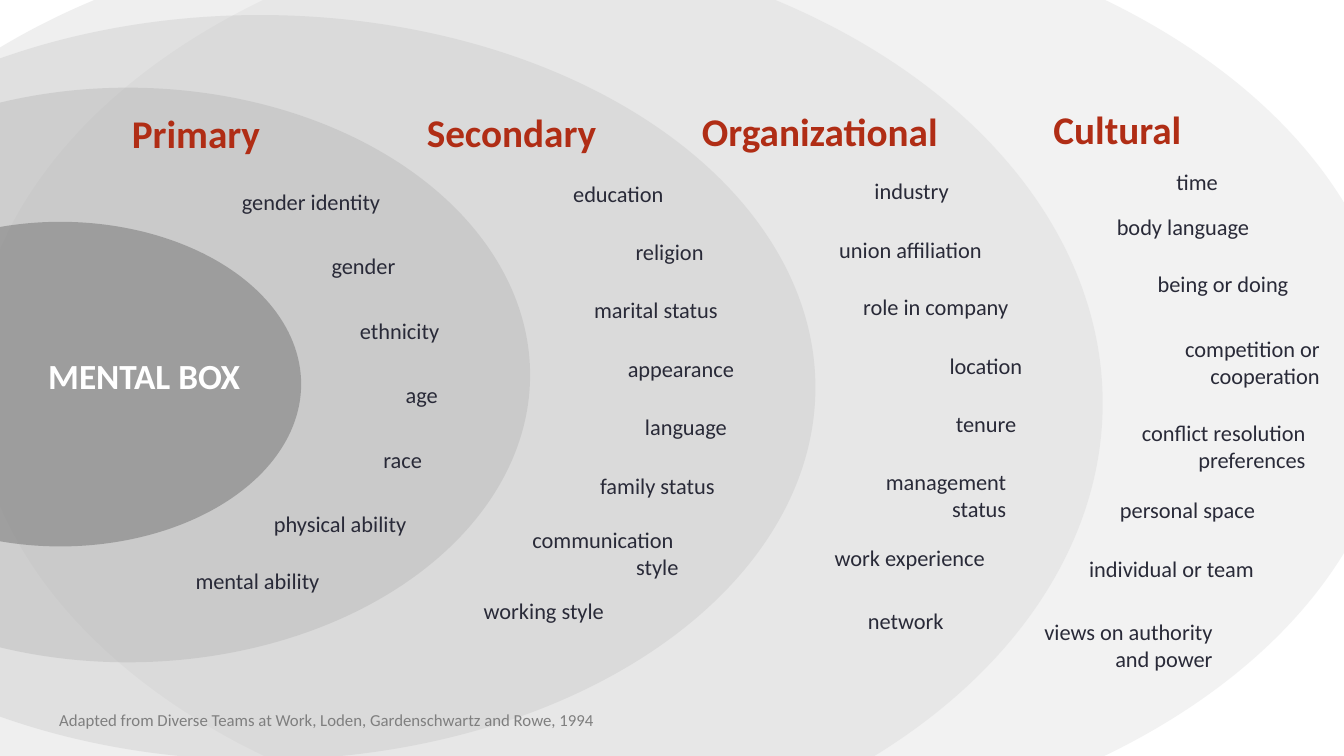
import pptx
import pptx.util
import pptx.dml.color
import pptx.enum.shapes
import pptx.enum.text
import pptx.oxml.ns
import lxml.etree

Cm = pptx.util.Cm
Align = pptx.enum.text.PP_ALIGN
Anchor = pptx.enum.text.MSO_ANCHOR

SLIDE_SIZE = (33.87, 19.05)
FACTOR_WIDTH = 7.24
LINE_HEIGHT = 0.68
HEADING_COLOR, FACTOR_COLOR = "B02D15", "292A38"

# left, top, width, height, fill, opacity in percent
LAYERS = [
    (-0.69, -2.29, 35.86, 23.62, "F2F2F2", 100),
    (-5.87, -1.65, 33.66, 23.62, "D8D8D8", 39),
    (-7.44, 0.38, 27.99, 18.77, "BFBFBF", 31),
    (-6.91, 2.21, 20.27, 14.48, "A5A5A5", 29),
    (-4.55, 5.59, 12.14, 8.18, "7F7F7F", 59),
]

# heading, heading box, line spacing, alignment, factors (text, left, top, lines, width)
DIMENSIONS = [
    ("Primary", (2.08, 2.79, 5.72, 1.27), 0.9, Align.CENTER, [
        ("gender identity", 4.22, 4.6),
        ("gender", 5.54, 6.22),
        ("ethnicity", 6.45, 7.85),
        ("age", 7.01, 9.47),
        ("race", 6.53, 11.1),
        ("physical ability", 4.95, 12.73),
        ("mental ability", 2.87, 14.15),
    ]),
    ("Secondary", (9.73, 2.82, 6.32, 1.24), 0.8, Align.RIGHT, [
        ("education", 9.73, 4.42),
        ("religion", 10.74, 5.87),
        ("marital status", 11.1, 7.34),
        ("appearance", 11.51, 8.81),
        ("language", 11.33, 10.29),
        ("family status", 11.02, 11.76),
        ("communication \nstyle", 10.11, 13.13, 2),
        ("working style", 8.23, 14.91),
    ]),
    ("Organizational", (17.04, 2.82, 7.24, 1.19), 0.8, Align.RIGHT, [
        ("industry", 16.92, 4.34),
        ("union affiliation", 17.75, 5.82),
        ("role in company", 18.42, 7.26),
        ("location", 18.77, 8.74),
        ("tenure", 18.62, 10.21),
        ("management status", 21.11, 11.66, 2, 4.5),
        ("work experience", 17.83, 13.59),
        ("network", 16.79, 15.16),
    ]),
    ("Cultural", (24.54, 2.67, 7.24, 1.32), 0.9, Align.RIGHT, [
        ("time", 23.7, 4.11),
        ("body language", 24.49, 5.23),
        ("being or doing", 25.48, 6.68),
        ("competition or cooperation", 27.79, 8.31, 2, 5.72),
        ("conflict resolution preferences", 25.91, 10.44, 2),
        ("personal space", 24.64, 12.37),
        ("individual or team", 24.61, 13.87),
        ("views on authority and power", 25.55, 15.44, 2, 5.26),
    ]),
]

CORE = ("MENTAL BOX", (0.69, 8.92, 5.89, 2.31))
SOURCE = ("Adapted from Diverse Teams at Work, Loden, Gardenschwartz and Rowe, 1994",
          (1.24, 17.75, 15.95, 0.76))


def paint(color_holder, hex_color):
    """Set a solid fill or a font to a hex colour."""
    if hasattr(color_holder, "solid"):
        color_holder.solid()
        color_holder.fore_color.rgb = pptx.dml.color.RGBColor.from_string(hex_color)
    else:
        color_holder.color.rgb = pptx.dml.color.RGBColor.from_string(hex_color)


def add_layer(slide, left, top, width, height, color, opacity):
    """Draw one ellipse of the nested layers."""
    layer = slide.shapes.add_shape(pptx.enum.shapes.MSO_SHAPE.OVAL,
                                   Cm(left), Cm(top), Cm(width), Cm(height))
    layer.shadow.inherit = False
    layer.line.fill.background()
    paint(layer.fill, color)
    if opacity < 100:
        tint = layer.fill._xPr.find(".//" + pptx.oxml.ns.qn("a:srgbClr"))
        alpha = lxml.etree.SubElement(tint, pptx.oxml.ns.qn("a:alpha"))
        alpha.set("val", str(opacity * 1000))


def add_label(slide, text, box, size, color, align, bold=False, spacing=None,
              anchor=Anchor.TOP, insets=(0.25, 0.13)):
    """Write a wrapped text box in one style."""
    frame = slide.shapes.add_textbox(*map(Cm, box)).text_frame
    frame.word_wrap = True
    frame.vertical_anchor = anchor
    frame.margin_left = frame.margin_right = Cm(insets[0])
    frame.margin_top = frame.margin_bottom = Cm(insets[1])
    frame.text = text
    for paragraph in frame.paragraphs:
        paragraph.alignment = align
        paragraph.line_spacing = spacing
        paragraph.font.name = "Calibri"
        paragraph.font.size = pptx.util.Pt(size)
        paragraph.font.bold = bold
        paint(paragraph.font, color)


def add_factor(slide, align, text, left, top, lines=1, width=FACTOR_WIDTH):
    """Write one factor of a dimension."""
    box = (left, top, width, lines * LINE_HEIGHT + 0.26)
    add_label(slide, text, box, 16, FACTOR_COLOR, align)


def main():
    """Build the slide and save it."""
    deck = pptx.Presentation()
    deck.slide_width, deck.slide_height = map(Cm, SLIDE_SIZE)
    slide = deck.slides.add_slide(deck.slide_layouts[6])
    for layer in LAYERS:
        add_layer(slide, *layer)
    add_label(slide, *CORE, 25.2, "FFFFFF", Align.CENTER, bold=True, spacing=0.9)
    for heading, box, spacing, align, factors in DIMENSIONS:
        add_label(slide, heading, box, 28, HEADING_COLOR, Align.CENTER, bold=True,
                  spacing=spacing, anchor=Anchor.MIDDLE, insets=(0.18, 0.1))
        for factor in factors:
            add_factor(slide, align, *factor)
    add_label(slide, *SOURCE, 12, "7F7F7F", Align.LEFT)
    deck.save("out.pptx")


if __name__ == "__main__":
    main()
